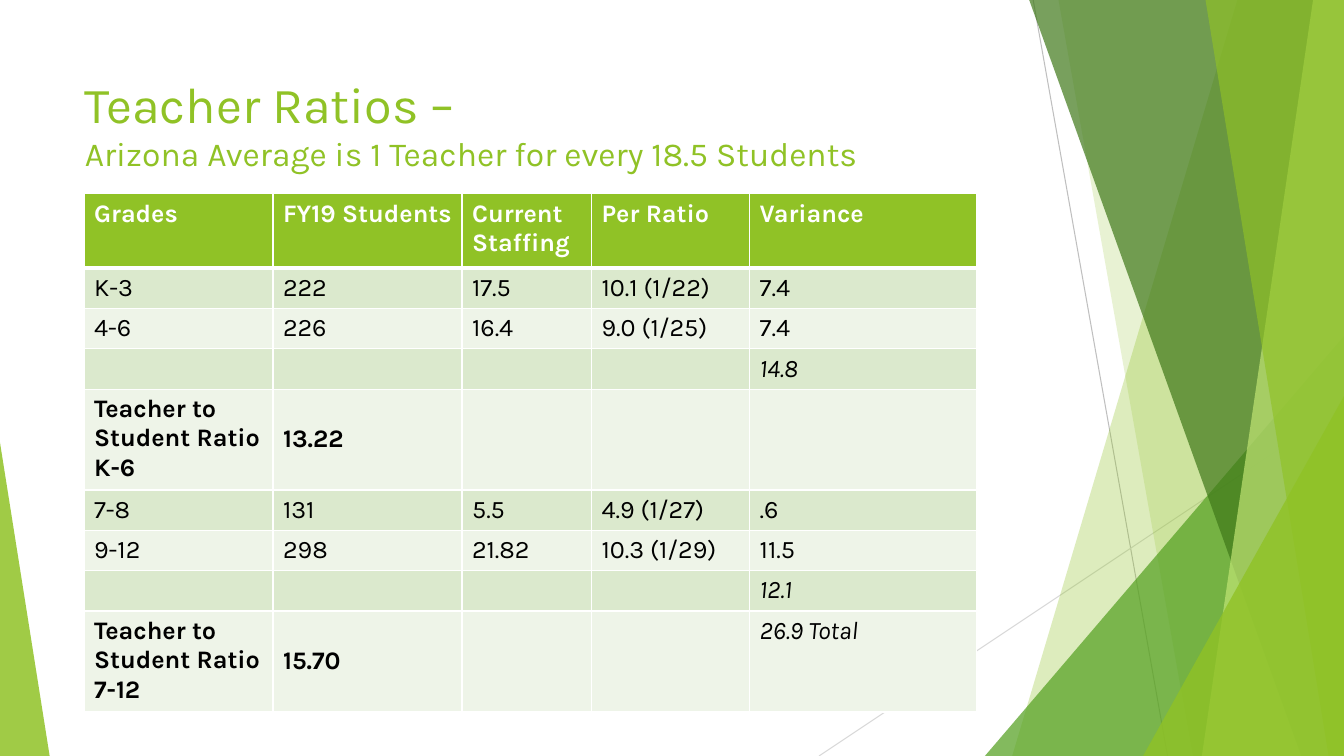
from lxml import etree
from pptx import Presentation
from pptx.dml.color import RGBColor
from pptx.enum import shapes, text
from pptx.oxml import ns
from pptx.util import Pt

GREEN = RGBColor(0x90, 0xC2, 0x26)
MID_GREEN = RGBColor(0x54, 0xA0, 0x21)
DARK_GREEN = RGBColor(0x3F, 0x78, 0x19)
LIME = RGBColor(0xC0, 0xE4, 0x74)
BAND_DARK = RGBColor(0xDB, 0xE9, 0xCD)
BAND_LIGHT = RGBColor(0xEE, 0xF4, 0xE8)
GREY = RGBColor(0xBF, 0xBF, 0xBF)
LIGHT_GREY = RGBColor(0xD9, 0xD9, 0xD9)
WHITE = RGBColor(0xFF, 0xFF, 0xFF)
BLACK = RGBColor(0, 0, 0)
FONT = "Karla"
WIDTH, HEIGHT = 960, 540


def paint(shape, color, opacity):
    """Give a shape a see-through fill with no outline or shadow."""
    shape.shadow.inherit = False
    shape.line.fill.background()
    shape.fill.solid()
    shape.fill.fore_color.rgb = color
    color_node = shape.fill._xPr.find(".//" + ns.qn("a:srgbClr"))
    etree.SubElement(color_node, ns.qn("a:alpha"), val=str(opacity * 1000))


def add_run(paragraph, words, size, color, bold=False, italic=False):
    run = paragraph.add_run()
    run.text = words
    run.font.name = FONT
    run.font.size = Pt(size)
    run.font.color.rgb = color
    run.font.bold = bold
    run.font.italic = italic


presentation = Presentation()
presentation.slide_width, presentation.slide_height = Pt(WIDTH), Pt(HEIGHT)
slide = presentation.slides.add_slide(presentation.slide_layouts[6])

# Thin background lines
for x1, y1, x2, y2, color in [
    (738, 0, 834, HEIGHT, GREY),
    (WIDTH, 290, 585, HEIGHT, LIGHT_GREY),
]:
    line = slide.shapes.add_connector(
        shapes.MSO_CONNECTOR.STRAIGHT, Pt(x1), Pt(y1), Pt(x2), Pt(y2))
    line.line.color.rgb = color
    line.line.width = Pt(0.75)
    etree.SubElement(line._element.spPr, ns.qn("a:effectLst"))

# Green facets, back to front: bands (top x, bottom x) reach the right edge,
# triangles (left, top, width, apex) stand on the bottom edge
for kind, measures, color, opacity in [
    ("band", (884, 723), GREEN, 30),
    ("band", (756, 852), GREEN, 20),
    ("triangle", (703.5, 240, 256.5, 1), MID_GREEN, 72),
    ("band", (735, 929.5), DARK_GREEN, 70),
    ("band", (938, 858.5), LIME, 70),
    ("band", (861, 949), GREEN, 65),
    ("triangle", (816.5, 283, 143.5, 1), GREEN, 80),
    ("triangle", (0, 316, 35.5, 0), GREEN, 85),
]:
    if kind == "band":
        top_x, bottom_x = measures
        builder = slide.shapes.build_freeform(Pt(top_x), Pt(-0.5))
        builder.add_line_segments([
            (Pt(WIDTH), Pt(-0.5)), (Pt(WIDTH), Pt(HEIGHT)), (Pt(bottom_x), Pt(HEIGHT))])
        facet = builder.convert_to_shape()
    else:
        left, top, width, apex = measures
        facet = slide.shapes.add_shape(
            shapes.MSO_SHAPE.ISOSCELES_TRIANGLE,
            Pt(left), Pt(top), Pt(width), Pt(HEIGHT - top))
        facet.adjustments[0] = apex
    paint(facet, color, opacity)

# Title
title = slide.shapes.add_textbox(Pt(53.5), Pt(48.5), Pt(677), Pt(103.5))
title.text_frame.word_wrap = True
title.text_frame.vertical_anchor = text.MSO_ANCHOR.TOP
paragraph = title.text_frame.paragraphs[0]
add_run(paragraph, "Teacher Ratios –", 36, GREEN)
paragraph.add_line_break()
add_run(paragraph, "Arizona Average is 1 Teacher for every 18.5 Students", 24, GREEN)

# Staffing table
rows = [
    ["Grades", "FY19 Students", "Current Staffing", "Per Ratio", "Variance"],
    ["K-3", "222", "17.5", "10.1 (1/22)", "7.4"],
    ["4-6", "226", "16.4", "9.0 (1/25)", "7.4"],
    ["", "", "", "", "14.8"],
    ["Teacher to Student Ratio\nK-6", "13.22", "", "", ""],
    ["7-8", "131", "5.5", "4.9 (1/27)", ".6"],
    ["9-12", "298", "21.82", "10.3 (1/29)", "11.5"],
    ["", "", "", "", "12.1"],
    ["Teacher to Student Ratio\n7-12", "15.70", "", "", "26.9 Total"],
]
column_widths = [135, 135, 92.5, 113, 162]
row_heights = [53] + [26.5, 26.5, 26.5, 66] * 2
ratio_rows, total_rows = (4, 8), (3, 7, 8)

frame = slide.shapes.add_table(
    len(rows), len(column_widths), Pt(60), Pt(138.5),
    Pt(sum(column_widths)), Pt(sum(row_heights)))
table = frame.table
for column, width in zip(table.columns, column_widths):
    column.width = Pt(width)
for row, height in zip(table.rows, row_heights):
    row.height = Pt(height)

for r, row in enumerate(rows):
    for c, words in enumerate(row):
        cell = table.cell(r, c)
        # White borders, thicker under the header
        for side in "LRTB":
            thick = (r, side) in ((0, "B"), (1, "T"))
            border = etree.SubElement(
                cell._tc.get_or_add_tcPr(), ns.qn("a:ln" + side),
                w=str(Pt(3 if thick else 1)))
            solid = etree.SubElement(border, ns.qn("a:solidFill"))
            etree.SubElement(solid, ns.qn("a:srgbClr"), val=str(WHITE))
        cell.fill.solid()
        cell.fill.fore_color.rgb = (
            GREEN if r == 0 else BAND_DARK if r % 2 else BAND_LIGHT)
        if r in ratio_rows and c == 1:
            cell.vertical_anchor = text.MSO_ANCHOR.MIDDLE
        if not words:
            continue
        for i, part in enumerate(words.split("\n")):
            cell_text = cell.text_frame
            paragraph = cell_text.add_paragraph() if i else cell_text.paragraphs[0]
            add_run(paragraph, part, 18, BLACK if r else WHITE,
                    bold=r == 0 or (r in ratio_rows and c < 2),
                    italic=r in total_rows and c == 4)

presentation.save("out.pptx")
